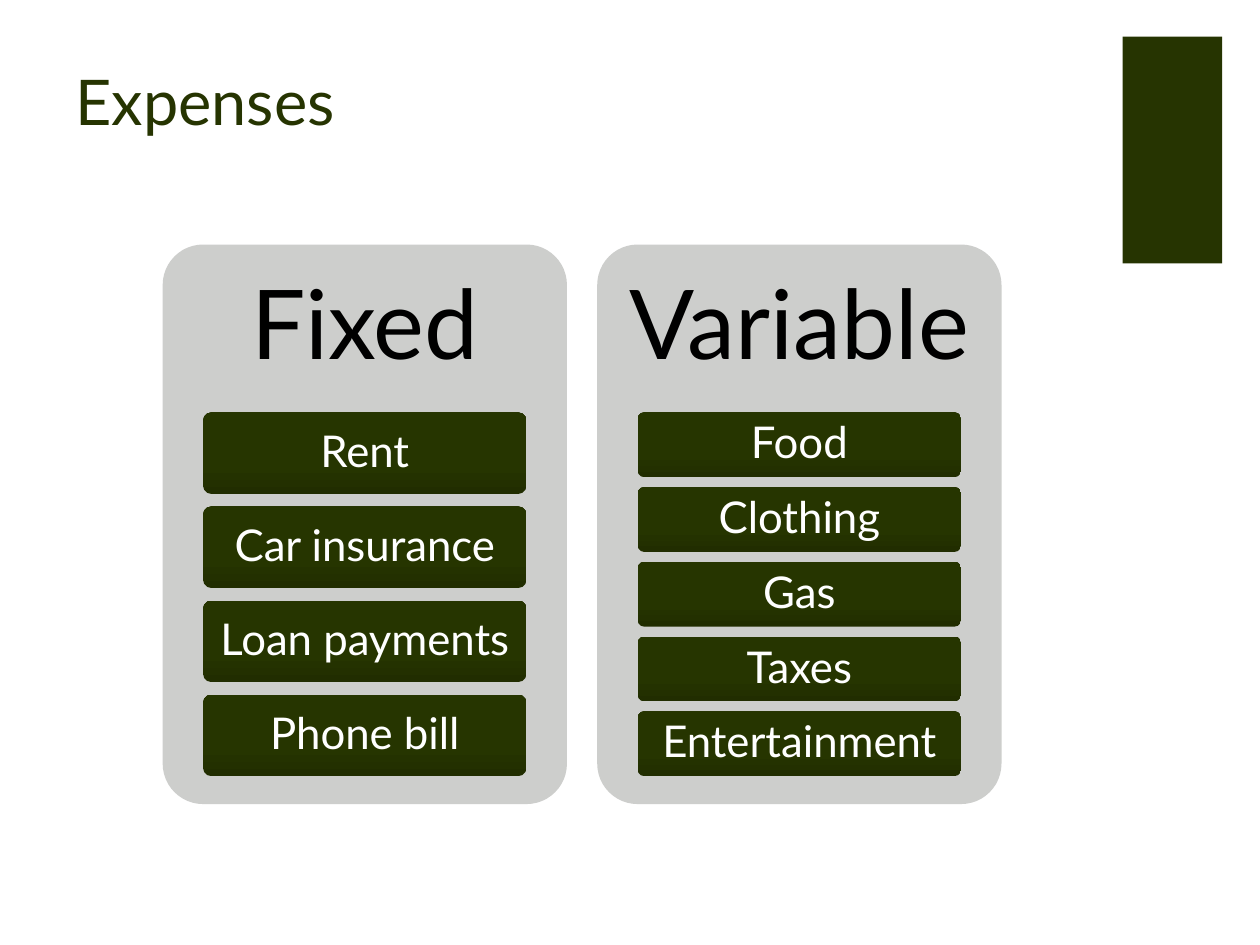
import pptx
import pptx.dml.color
import pptx.enum.shapes
import pptx.enum.text
import pptx.util

Cm = pptx.util.Cm
RGBColor = pptx.dml.color.RGBColor
SHAPES = pptx.enum.shapes.MSO_SHAPE
ANCHOR = pptx.enum.text.MSO_ANCHOR
ALIGN = pptx.enum.text.PP_ALIGN

OLIVE = RGBColor(0x26, 0x34, 0x01)
CARD_OLIVE = RGBColor(0x26, 0x35, 0x00)
CARD_SHADE = RGBColor(0x21, 0x2D, 0x00)
PANEL_GREY = RGBColor(0xCD, 0xCE, 0xCC)
BLACK = RGBColor(0, 0, 0)
WHITE = RGBColor(0xFF, 0xFF, 0xFF)
FONT = "Lato"

EXPENSES = {
    "Fixed": ["Rent", "Car insurance", "Loan payments", "Phone bill"],
    "Variable": ["Food", "Clothing", "Gas", "Taxes", "Entertainment"],
}

# Panel geometry in centimetres
PANEL_LEFT, PANEL_TOP = 3.28, 4.93
PANEL_WIDTH, PANEL_HEIGHT = 8.15, 11.28
PANEL_PITCH = 8.76
HEADING_HEIGHT = 0.3 * PANEL_HEIGHT
CARDS_HEIGHT = 0.65 * PANEL_HEIGHT
CARD_WIDTH = 0.8 * PANEL_WIDTH
GAP_RATIO = 2 / 13  # gap between cards, relative to card height


def write(frame, text, size, color, align=ALIGN.CENTER, anchor=ANCHOR.MIDDLE):
    frame.text = text
    frame.word_wrap = True
    frame.vertical_anchor = anchor
    paragraph = frame.paragraphs[0]
    paragraph.alignment = align
    font = paragraph.runs[0].font
    font.name, font.size = FONT, pptx.util.Pt(size)
    font.color.rgb = color
    return paragraph


def set_insets(frame, horizontal, vertical):
    frame.margin_left = frame.margin_right = Cm(horizontal)
    frame.margin_top = frame.margin_bottom = Cm(vertical)


def add_block(slide, preset, left, top, width, height, color):
    block = slide.shapes.add_shape(
        preset, Cm(left), Cm(top), Cm(width), Cm(height))
    block.shadow.inherit = False
    block.line.fill.background()
    block.fill.solid()
    block.fill.fore_color.rgb = color
    if preset == SHAPES.ROUNDED_RECTANGLE:
        block.adjustments[0] = 0.1
    return block


def add_title(slide, text):
    title = slide.shapes.title
    title.left, title.top = Cm(1.27), Cm(1.07)
    title.width, title.height = Cm(18.08), Cm(1.85)
    write(title.text_frame, text, 36, OLIVE, ALIGN.LEFT, ANCHOR.BOTTOM)


def add_card(slide, left, top, height, text):
    card = add_block(slide, SHAPES.ROUNDED_RECTANGLE,
                     left, top, CARD_WIDTH, height, CARD_OLIVE)
    # Slightly darker towards the bottom edge
    card.fill.gradient()
    card.fill.gradient_angle = 90
    shades = [(0, CARD_SHADE), (0.35, CARD_OLIVE)]
    for stop, (position, color) in zip(card.fill.gradient_stops, shades):
        stop.position = position
        stop.color.rgb = color
    set_insets(card.text_frame, 0.18, 0.13)
    write(card.text_frame, text, 25, WHITE).line_spacing = 0.9


def add_panel(slide, left, heading, items):
    add_block(slide, SHAPES.ROUNDED_RECTANGLE,
              left, PANEL_TOP, PANEL_WIDTH, PANEL_HEIGHT, PANEL_GREY)
    heading_box = slide.shapes.add_textbox(
        Cm(left), Cm(PANEL_TOP), Cm(PANEL_WIDTH), Cm(HEADING_HEIGHT))
    set_insets(heading_box.text_frame, 0.58, 0.58)
    write(heading_box.text_frame, heading, 55, BLACK).line_spacing = 0.9

    # Cards share the same total height, whatever their number
    card_height = CARDS_HEIGHT / (len(items) + (len(items) - 1) * GAP_RATIO)
    card_left = left + (PANEL_WIDTH - CARD_WIDTH) / 2
    for row, item in enumerate(items):
        card_top = (PANEL_TOP + HEADING_HEIGHT
                    + row * card_height * (1 + GAP_RATIO))
        add_card(slide, card_left, card_top, card_height, item)


def main():
    deck = pptx.Presentation()
    deck.slide_width, deck.slide_height = Cm(25.4), Cm(19.05)
    slide = deck.slides.add_slide(deck.slide_layouts[5])

    # Corner accent and title
    add_block(slide, SHAPES.RECTANGLE, 22.63, 0.74, 2.01, 4.57, OLIVE)
    add_title(slide, "Expenses")

    # One panel per kind of expense
    for column, (heading, items) in enumerate(EXPENSES.items()):
        add_panel(slide, PANEL_LEFT + column * PANEL_PITCH, heading, items)

    deck.save("out.pptx")


if __name__ == "__main__":
    main()
